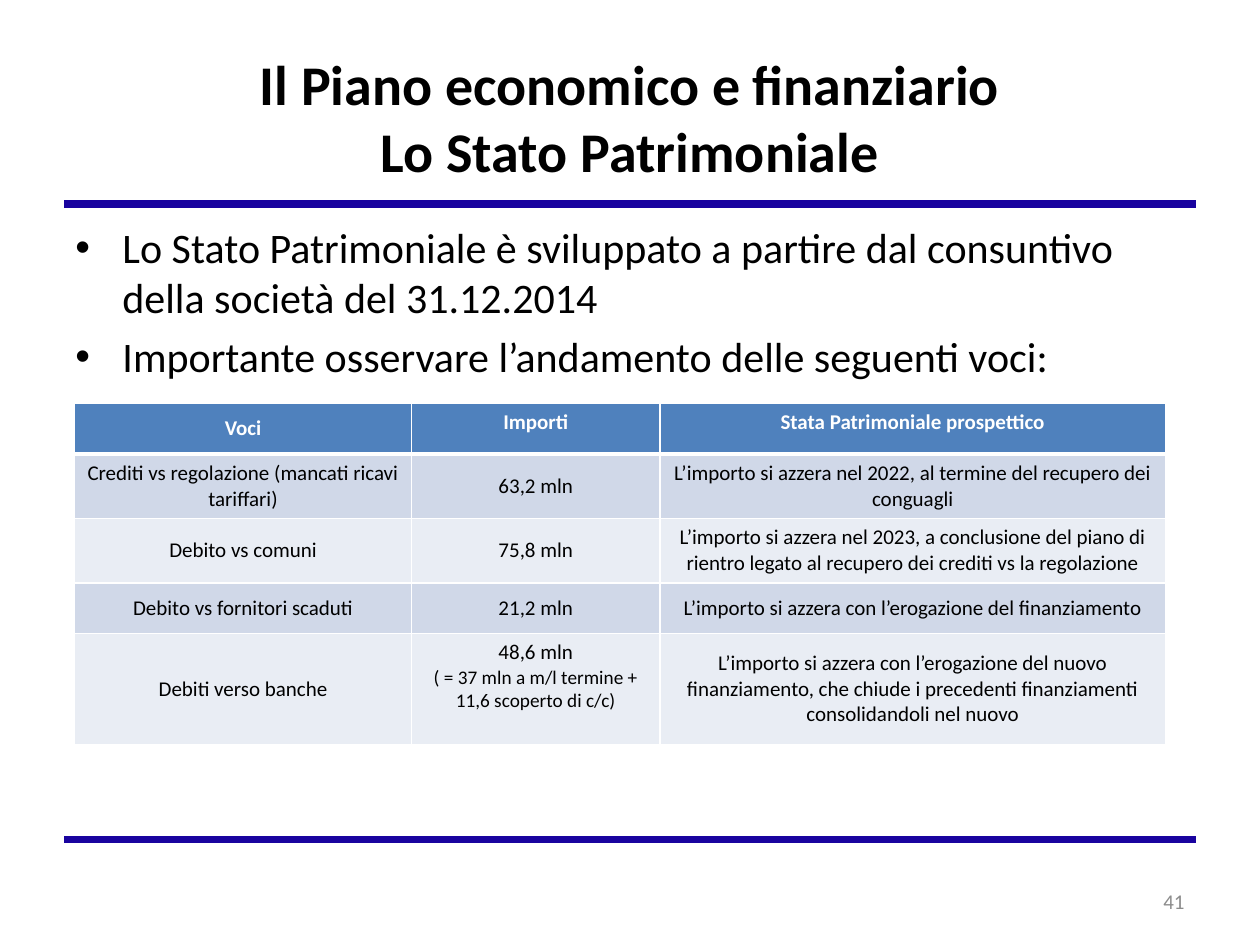
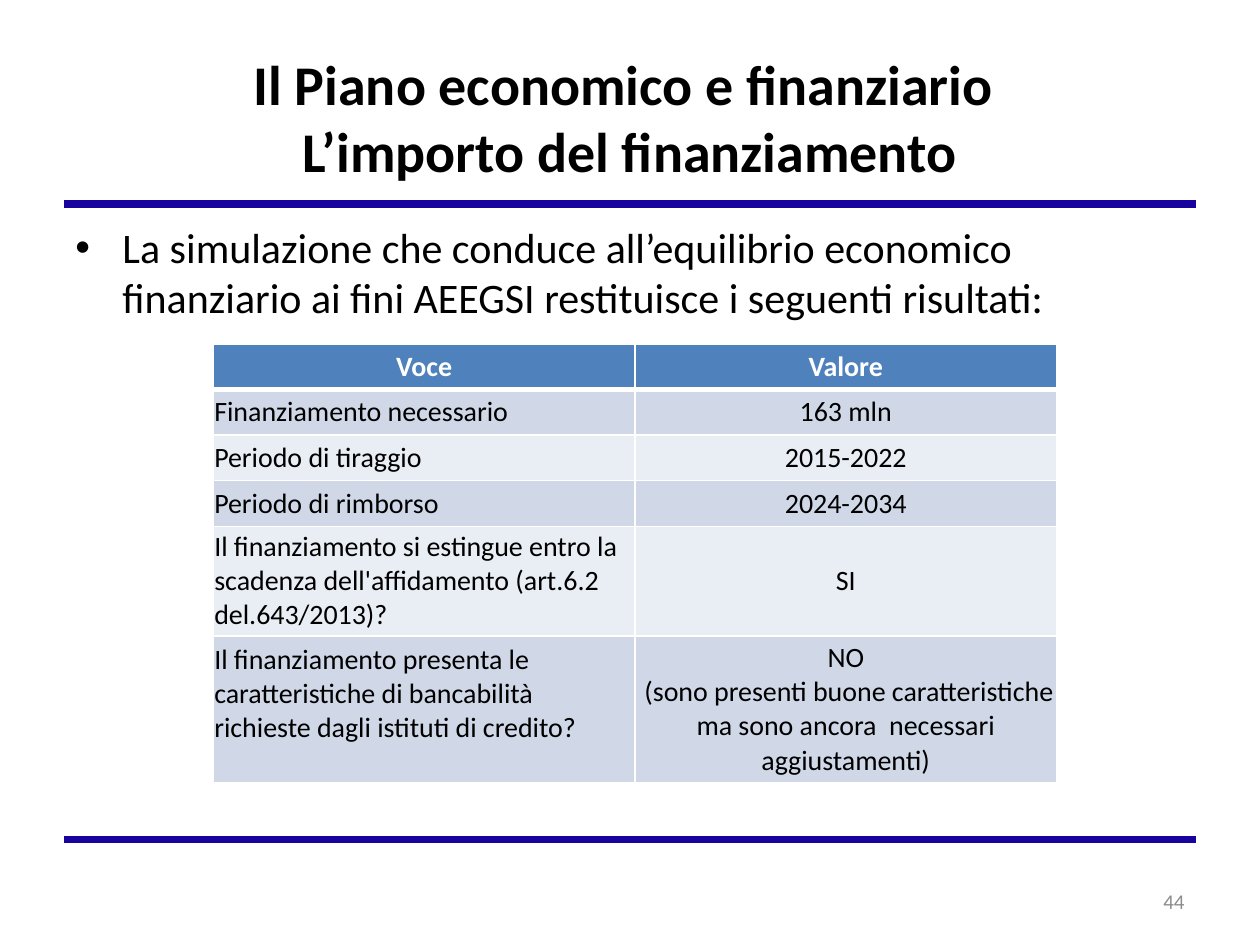
from dataclasses import dataclass

from lxml import etree
from pptx import Presentation
from pptx.dml.color import RGBColor
from pptx.enum.shapes import MSO_CONNECTOR
from pptx.enum.text import MSO_ANCHOR, PP_ALIGN
from pptx.oxml.ns import qn
from pptx.util import Cm, Pt

LEFT, CENTER, RIGHT = PP_ALIGN.LEFT, PP_ALIGN.CENTER, PP_ALIGN.RIGHT
TOP, MIDDLE = MSO_ANCHOR.TOP, MSO_ANCHOR.MIDDLE
STRAIGHT = MSO_CONNECTOR.STRAIGHT
TITLE_ONLY = 5

BLACK = RGBColor(0x00, 0x00, 0x00)
WHITE = RGBColor(0xFF, 0xFF, 0xFF)
GREY = RGBColor(0x8C, 0x8C, 0x8C)
RULE_BLUE = RGBColor(0x19, 0x03, 0x9F)
HEADER_BLUE = RGBColor(0x4F, 0x81, 0xBD)
BANDS = (RGBColor(0xE9, 0xED, 0xF4), RGBColor(0xD0, 0xD8, 0xE8))

FONT = "Calibri"
INDENT = Cm(0.95)
TOP_INSET = Cm(0.13)


@dataclass
class Cell:
    """Table cell; its second paragraph can have a size of its own."""
    text: str
    anchor: int = MIDDLE
    second_size: float = None


class Deck:
    def __init__(self):
        self.prs = Presentation()
        self.prs.slide_width, self.prs.slide_height = Cm(25.4), Cm(19.05)
        self.s = None

    def add_run(self, p, text, size, color=BLACK, bold=False):
        r = p.add_run()
        r.text = text
        r.font.name, r.font.size, r.font.bold = FONT, Pt(size), bold
        r.font.color.rgb = color

    def add_slide(self, title_lines, number):
        self.s = self.prs.slides.add_slide(self.prs.slide_layouts[TITLE_ONLY])
        for y in (Cm(4.11), Cm(16.92)):
            self.add_rule(y)
        self.add_title(title_lines)
        self.add_number(number)

    def add_rule(self, y):
        sp = self.s.shapes.add_connector(STRAIGHT, Cm(1.3), y, Cm(24.1), y)
        sp.line.color.rgb, sp.line.width = RULE_BLUE, Pt(4.25)
        etree.SubElement(sp._element.spPr, qn("a:effectLst"))

    def add_title(self, lines):
        sp = self.s.shapes.title
        sp.left, sp.top, sp.width, sp.height = Cm(1.27), Cm(0.76), Cm(22.86), Cm(3.18)
        sp.text_frame.vertical_anchor = MIDDLE
        p = sp.text_frame.paragraphs[0]
        p.alignment = CENTER
        for i, line in enumerate(lines):
            if i:
                p.add_line_break()
            self.add_run(p, line, 32, bold=True)

    def add_textbox(self, left, top, width, height, anchor=TOP):
        tf = self.s.shapes.add_textbox(left, top, width, height).text_frame
        tf.word_wrap = True
        tf.vertical_anchor = anchor
        return tf

    def add_number(self, number):
        tf = self.add_textbox(Cm(18.2), Cm(17.66), Cm(5.93), Cm(1.01), MIDDLE)
        p = tf.paragraphs[0]
        p.alignment = RIGHT
        self.add_run(p, str(number), 12, GREY)

    def add_bullets(self, items):
        tf = self.add_textbox(Cm(1.27), Cm(4.34), Cm(22.86), Cm(12.57))
        for i, item in enumerate(items):
            p = tf.add_paragraph() if i else tf.paragraphs[0]
            pPr = p._p.get_or_add_pPr()
            pPr.set("marL", str(INDENT))
            pPr.set("indent", str(-INDENT))
            etree.SubElement(pPr, qn("a:buFont"), typeface="Arial")
            etree.SubElement(pPr, qn("a:buChar"), char="•")
            p.space_before = Pt(4.8 if i else 0)
            self.add_run(p, item, 24)

    def add_table(self, left, top, col_widths, row_heights, rows, size,
                  side_inset=Cm(0.25), top_inset=TOP_INSET, first_align=CENTER):
        table = self.s.shapes.add_table(
            len(rows), len(col_widths), left, top,
            sum(col_widths), sum(row_heights)).table
        for column, width in zip(table.columns, col_widths):
            column.width = width
        for i, (row, height) in enumerate(zip(rows, row_heights)):
            table.rows[i].height = height
            for j, content in enumerate(row):
                if isinstance(content, str):
                    content = Cell(content)
                cell = table.cell(i, j)
                cell.margin_left = cell.margin_right = side_inset
                cell.margin_top = TOP_INSET if content.anchor == TOP else top_inset
                cell.margin_bottom = top_inset
                align = first_align if i and j == 0 else CENTER
                self.fill_cell(cell, content, i, size, align)

    def fill_cell(self, cell, content, row, size, align):
        cell.vertical_anchor = content.anchor
        cell.fill.solid()
        cell.fill.fore_color.rgb = BANDS[row % 2] if row else HEADER_BLUE
        self.add_borders(cell, Pt(3 if row == 1 else 1), Pt(1 if row else 3))
        for i, line in enumerate(content.text.split("\n")):
            tf = cell.text_frame
            p = tf.add_paragraph() if i else tf.paragraphs[0]
            p.alignment = align
            line_size = content.second_size if i and content.second_size else size
            self.add_run(p, line, line_size, BLACK if row else WHITE, bold=not row)

    def add_borders(self, cell, above, below):
        tcPr = cell._tc.get_or_add_tcPr()
        edges = (("L", Pt(1)), ("R", Pt(1)), ("T", above), ("B", below))
        for i, (side, width) in enumerate(edges):
            ln = etree.Element(qn(f"a:ln{side}"), w=str(width))
            fill = etree.SubElement(ln, qn("a:solidFill"))
            etree.SubElement(fill, qn("a:srgbClr"), val=str(WHITE))
            tcPr.insert(i, ln)


def add_balance_sheet(deck):
    deck.add_slide(["Il Piano economico e finanziario", "Lo Stato Patrimoniale"], 41)
    deck.add_bullets([
        "Lo Stato Patrimoniale è sviluppato a partire dal consuntivo "
        "della società del 31.12.2014",
        "Importante osservare l’andamento delle seguenti voci:",
    ])
    rows = [
        ("Voci", Cell("Importi", TOP), Cell("Stata Patrimoniale prospettico", TOP)),
        ("Crediti vs regolazione (mancati ricavi tariffari)", "63,2 mln",
         "L’importo si azzera nel 2022, al termine del recupero dei conguagli"),
        ("Debito vs comuni", "75,8 mln",
         "L’importo si azzera nel 2023, a conclusione del piano di rientro "
         "legato al recupero dei crediti vs la regolazione"),
        ("Debito vs fornitori scaduti", "21,2 mln",
         "L’importo si azzera con l’erogazione del finanziamento"),
        ("Debiti verso banche",
         Cell("48,6 mln\n( = 37 mln a m/l termine + 11,6 scoperto di c/c)", TOP, 11),
         "L’importo si azzera con l’erogazione del nuovo finanziamento, "
         "che chiude i precedenti finanziamenti\nconsolidandoli nel nuovo"),
    ]
    deck.add_table(Cm(1.5), Cm(8.13), [Cm(6.8), Cm(5), Cm(10.2)],
                   [Cm(h) for h in (1.02, 1.3, 1.3, 1.02, 2.24)], rows, 12)


def add_loan_amount(deck):
    deck.add_slide(["Il Piano economico e finanziario ", "L’importo del finanziamento"], 44)
    deck.add_bullets([
        "La simulazione che conduce all’equilibrio economico finanziario "
        "ai fini AEEGSI restituisce i seguenti risultati:",
    ])
    rows = [
        ("Voce", "Valore"),
        ("Finanziamento necessario", "163 mln"),
        ("Periodo di tiraggio", "2015-2022"),
        ("Periodo di rimborso", "2024-2034"),
        ("Il finanziamento si estingue entro la scadenza dell'affidamento "
         "(art.6.2 del.643/2013)?", "SI"),
        (Cell("Il finanziamento presenta le caratteristiche di bancabilità "
              "richieste dagli istituti di credito?", TOP),
         "NO\n (sono presenti buone caratteristiche ma sono ancora  necessari "
         "aggiustamenti)"),
    ]
    deck.add_table(Cm(4.3), Cm(6.93), [Cm(8.5)] * 2,
                   [Cm(0.92)] * 4 + [Cm(2.21), Cm(2.95)], rows, 16,
                   side_inset=Cm(0.02), top_inset=Cm(0.02), first_align=LEFT)


def main():
    deck = Deck()
    add_balance_sheet(deck)
    add_loan_amount(deck)
    deck.prs.save("out.pptx")


if __name__ == "__main__":
    main()
